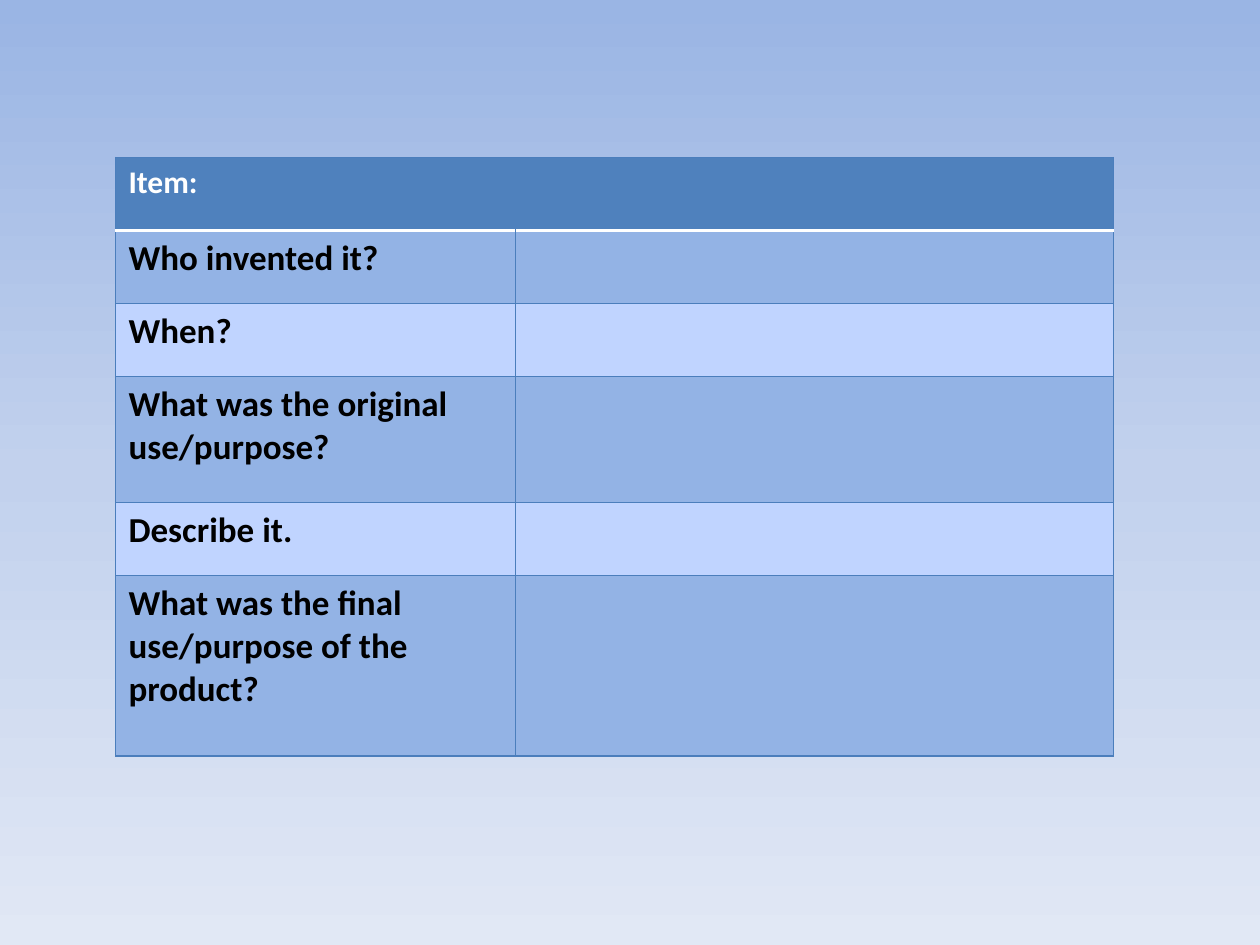
from copy import deepcopy

from lxml import etree
from pptx import Presentation
from pptx.dml.color import RGBColor
from pptx.oxml.ns import qn
from pptx.util import Inches, Pt

HEADER = "Item:"
QUESTIONS = [
    "Who invented it?",
    "When?",
    "What was the original use/purpose?",
    "Describe it.",
    "What was the final use/purpose of the product?",
]
TABLE_LEFT, TABLE_TOP = 0.92, 1.25
COLUMN_WIDTHS = [3.17, 4.75]
ROW_HEIGHTS = [0.58, 0.58, 0.58, 1, 0.58, 1.43]
THEME = {
    "font": "Calibri",
    "header_size": 18,
    "question_size": 20,
    "header_text": "FFFFFF",
    "question_text": "000000",
    "header_fill": "4F81BD",
    "band_fills": ["93B3E5", "C0D4FF"],
    "border": ("4B7EBC", 0.75),
    "header_rule": ("FFFFFF", 2),
    "background": [(0, "9AB5E4"), (0.5, "C2D1ED"), (1, "E1E8F5")],
}


def paint_background(slide, stops):
    """Fill the slide with a gradient running from top to bottom."""
    fill = slide.background.fill
    fill.gradient()
    fill.gradient_angle = 270
    stop_list = slide.element.find(".//" + qn("a:gsLst"))
    while len(stop_list) < len(stops):
        stop_list.append(deepcopy(stop_list[0]))
    for stop, (position, color) in zip(fill.gradient_stops, stops):
        stop.position = position
        stop.color.rgb = RGBColor.from_string(color)


def write_text(cell, text, *, size, color):
    """Put bold text into a cell."""
    paragraph = cell.text_frame.paragraphs[0]
    paragraph.font.size = Pt(size)
    if text:
        run = paragraph.add_run()
        run.text = text
        run.font.name = THEME["font"]
        run.font.size = Pt(size)
        run.font.bold = True
        run.font.color.rgb = RGBColor.from_string(color)


def style_cell(cell, fill_color, top, bottom):
    """Draw the four borders of a cell and fill it."""
    properties = cell._tc.get_or_add_tcPr()
    side = THEME["border"]
    borders = {"a:lnL": side, "a:lnR": side, "a:lnT": top, "a:lnB": bottom}
    for tag, (color, width) in borders.items():
        line = etree.SubElement(properties, qn(tag), w=str(Pt(width)))
        solid = etree.SubElement(line, qn("a:solidFill"))
        etree.SubElement(solid, qn("a:srgbClr"), val=color)
    cell.fill.solid()
    cell.fill.fore_color.rgb = RGBColor.from_string(fill_color)


def add_question_table(slide):
    """Add the worksheet table with its header and banded questions."""
    table = slide.shapes.add_table(
        len(ROW_HEIGHTS), len(COLUMN_WIDTHS),
        Inches(TABLE_LEFT), Inches(TABLE_TOP),
        Inches(sum(COLUMN_WIDTHS)), Inches(sum(ROW_HEIGHTS)),
    ).table
    for column, width in zip(table.columns, COLUMN_WIDTHS):
        column.width = Inches(width)
    for row, height in zip(table.rows, ROW_HEIGHTS):
        row.height = Inches(height)
    table.cell(0, 0).merge(table.cell(0, len(COLUMN_WIDTHS) - 1))

    border, rule = THEME["border"], THEME["header_rule"]
    for cell in table.rows[0].cells:
        style_cell(cell, THEME["header_fill"], border, rule)
    write_text(table.cell(0, 0), HEADER,
               size=THEME["header_size"], color=THEME["header_text"])

    for index, question in enumerate(QUESTIONS):
        fill_color = THEME["band_fills"][index % 2]
        for cell, text in zip(table.rows[index + 1].cells, (question, "")):
            style_cell(cell, fill_color, border if index else rule, border)
            write_text(cell, text,
                       size=THEME["question_size"], color=THEME["question_text"])


def main():
    """Build and save the slide."""
    presentation = Presentation()
    presentation.slide_width, presentation.slide_height = Inches(10), Inches(7.5)
    slide = presentation.slides.add_slide(presentation.slide_layouts[6])
    paint_background(slide, THEME["background"])
    add_question_table(slide)
    presentation.save("out.pptx")


if __name__ == "__main__":
    main()
